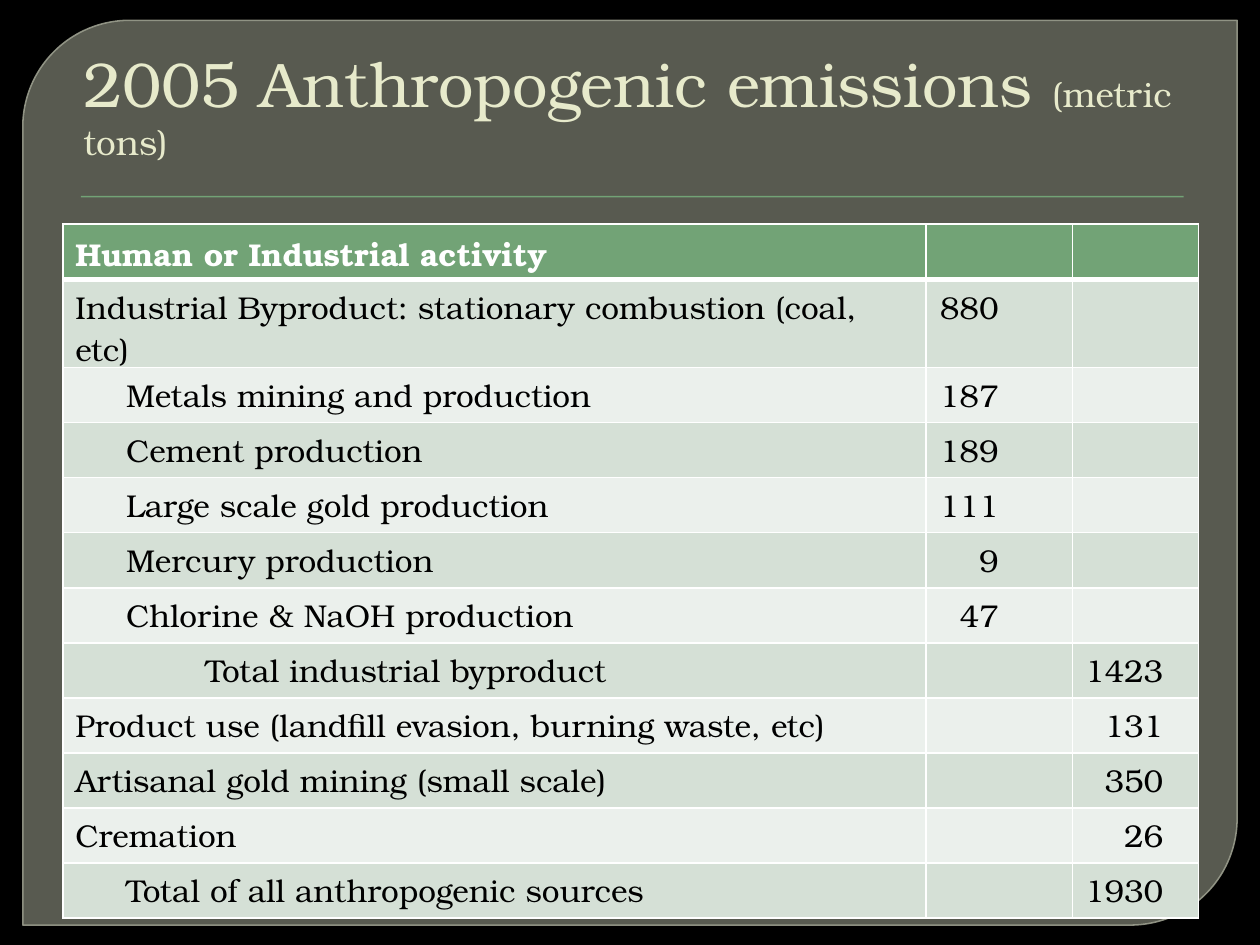
import lxml.etree
import pptx
import pptx.dml.color
import pptx.enum.shapes
import pptx.enum.text
import pptx.oxml.ns
import pptx.util

Cm = pptx.util.Cm
Pt = pptx.util.Pt
qn = pptx.oxml.ns.qn
Shape = pptx.enum.shapes.MSO_SHAPE
Align = pptx.enum.text.PP_ALIGN

INSET = 0.25
INDENT = 1.02
COLUMN_WIDTHS = (17.4, 2.95, 2.54)
NUMBER_MARGINS = (1.49, 0.71)
ROW_HEIGHT = 1.11

# activity, indent in cm, single amount, total amount
EMISSIONS = [
    ("Industrial Byproduct: stationary combustion (coal, etc)", 0, "880", ""),
    ("Metals mining and production", INDENT, "187", ""),
    ("Cement production", INDENT, "189", ""),
    ("Large scale gold production", INDENT, "111", ""),
    ("Mercury production", INDENT, "9", ""),
    ("Chlorine & NaOH production", INDENT, "47", ""),
    ("Total industrial byproduct", 2.62, "", "1423"),
    ("Product use (landfill evasion, burning waste, etc)", 0, "", "131"),
    ("Artisanal gold mining (small scale)", 0, "", "350"),
    ("Cremation", 0, "", "26"),
    ("Total of all anthropogenic sources", INDENT, "", "1930"),
]


def color(value):
    return pptx.dml.color.RGBColor.from_string(value)


def apply(target, values):
    for name, value in values.items():
        setattr(target, name, value)


def paint(fill, value):
    fill.solid()
    fill.fore_color.rgb = color(value)


def set_alpha(fill_owner, percent):
    """Make the solid fill found under an XML element partly transparent."""
    shade = fill_owner.find(qn("a:solidFill")).find(qn("a:srgbClr"))
    lxml.etree.SubElement(shade, qn("a:alpha"), val=str(percent * 1000))


class SlideBuilder:
    font = "TeX Gyre Bonum"
    white, black, accent = "FFFFFF", "000000", "72A376"
    bands = ("D5E0D6", "EBF0EC")

    def __init__(self, slide):
        self.slide = slide
        paint(slide.background.fill, self.black)

    def shape(self, kind, place, fill):
        shape = self.slide.shapes.add_shape(kind, *map(Cm, place))
        shape.shadow.inherit = False
        paint(shape.fill, fill)
        shape.line.fill.background()
        return shape

    def panel(self, place):
        panel = self.shape(Shape.ROUND_2_DIAG_RECTANGLE, place, "888B7B")
        panel.adjustments[0] = 0.118
        panel.adjustments[1] = 0
        set_alpha(panel.fill._xPr, 65)
        panel.line.color.rgb = color("9DA090")
        panel.line.width = Pt(0.87)
        set_alpha(panel.line._ln, 88)

    def span(self, para, text, size, shade, bold=False):
        span = para.add_run()
        span.text = text
        apply(span.font, {"name": self.font, "size": Pt(size), "bold": bold})
        span.font.color.rgb = color(shade)

    def title(self, place, spans):
        frame = self.slide.shapes.add_textbox(*map(Cm, place)).text_frame
        apply(frame, {
            "word_wrap": True,
            "vertical_anchor": pptx.enum.text.MSO_ANCHOR.BOTTOM,
            "margin_left": Cm(0.41),
        })
        for text, size in spans:
            self.span(frame.paragraphs[0], text, size, "E7EACB")

    def borders(self, cell, top, bottom):
        properties = cell._tc.get_or_add_tcPr()
        for side, width in {"L": 1, "R": 1, "T": top, "B": bottom}.items():
            line = lxml.etree.SubElement(
                properties, qn("a:ln" + side), w=str(Pt(width)))
            fill = lxml.etree.SubElement(line, qn("a:solidFill"))
            lxml.etree.SubElement(fill, qn("a:srgbClr"), val=self.white)

    def cell(self, cell, text, row, margins, align):
        header = row == 0
        self.borders(cell, 3 if row == 1 else 1, 3 if header else 1)
        paint(cell.fill, self.accent if header else self.bands[(row - 1) % 2])
        left, right = margins
        apply(cell, {"margin_left": Cm(left), "margin_right": Cm(right)})
        para = cell.text_frame.paragraphs[0]
        apply(para, {"alignment": align})
        para.font.size = Pt(18)
        if text:
            shade = self.white if header else self.black
            self.span(para, text, 18, shade, header)

    def table(self, left, top, rows):
        table = self.slide.shapes.add_table(
            len(rows), len(COLUMN_WIDTHS), Cm(left), Cm(top),
            Cm(sum(COLUMN_WIDTHS)), Cm(ROW_HEIGHT * len(rows))).table
        for column, width in zip(table.columns, COLUMN_WIDTHS):
            column.width = Cm(width)
        for row, (activity, indent, *amounts) in enumerate(rows):
            table.rows[row].height = Cm(ROW_HEIGHT)
            self.cell(table.cell(row, 0), activity, row,
                      (INSET + indent, INSET), Align.LEFT)
            for index, amount in enumerate(amounts):
                self.cell(table.cell(row, index + 1), amount, row,
                          (0, NUMBER_MARGINS[index]), Align.RIGHT)


def main():
    deck = pptx.Presentation()
    apply(deck, {"slide_width": Cm(25.4), "slide_height": Cm(19.05)})
    page = SlideBuilder(deck.slides.add_slide(deck.slide_layouts[6]))
    page.panel((0.46, 0.41, 24.48, 18.24))
    page.shape(Shape.RECTANGLE, (1.63, 3.95, 22.23, 0.03), page.accent)
    page.title((1.27, 1.24, 23.27, 2.16),
               [("2005 Anthropogenic emissions ", 36), ("(metric tons)", 20)])
    header = ("Human or Industrial activity", 0, "", "")
    page.table(1.27, 4.52, [header] + EMISSIONS)
    deck.save("out.pptx")


if __name__ == "__main__":
    main()
